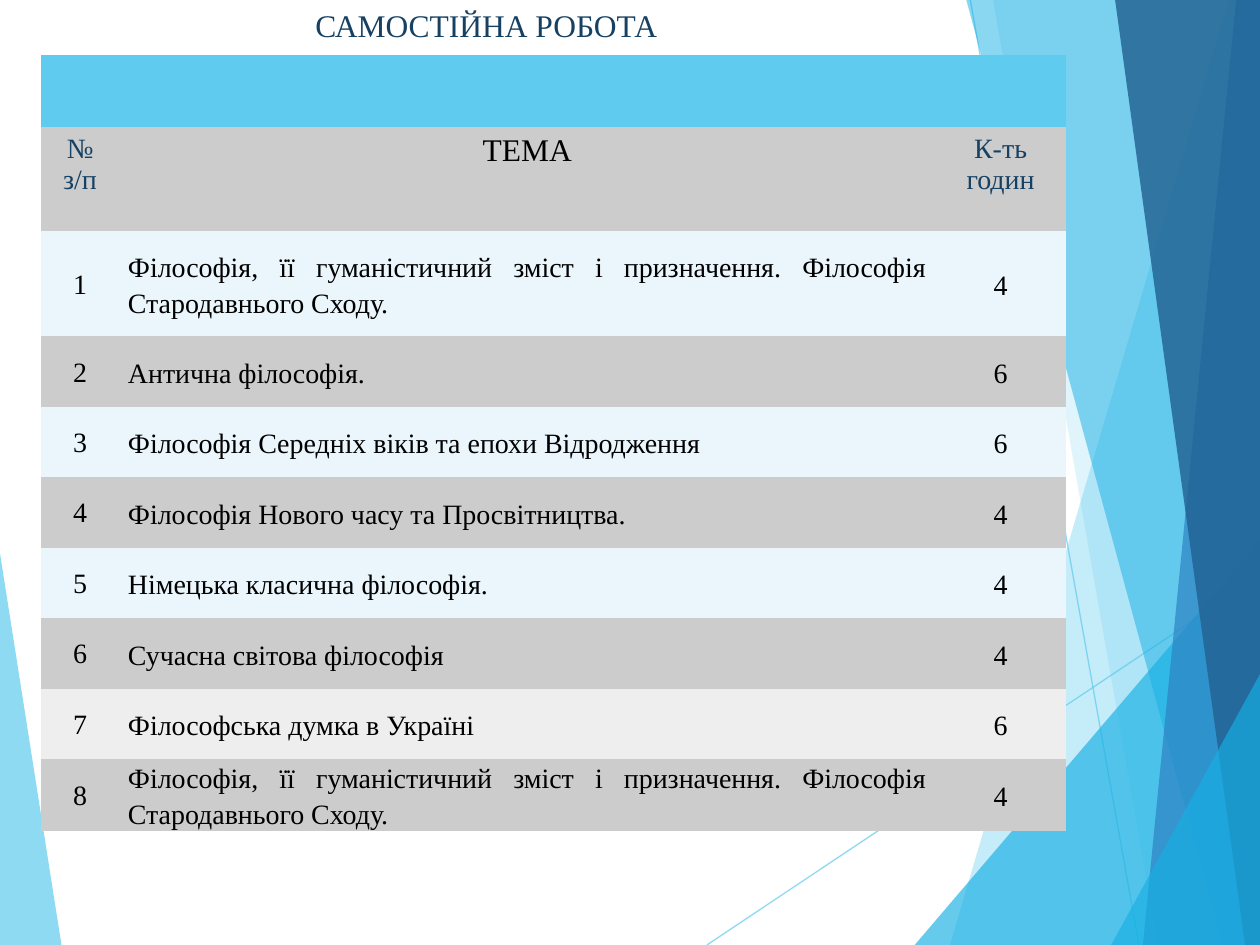
"""Builds the slide with the table of independent study topics."""
from lxml import etree
from pptx import Presentation
from pptx.dml.color import RGBColor
from pptx.enum.shapes import MSO_CONNECTOR
from pptx.enum.text import MSO_ANCHOR, MSO_AUTO_SIZE, PP_ALIGN
from pptx.oxml.ns import qn
from pptx.util import Cm, Pt

STRAIGHT = MSO_CONNECTOR.STRAIGHT
TOP, MIDDLE = MSO_ANCHOR.TOP, MSO_ANCHOR.MIDDLE
NO_AUTOFIT = MSO_AUTO_SIZE.NONE
CENTER, JUSTIFY = PP_ALIGN.CENTER, PP_ALIGN.JUSTIFY

SKY = RGBColor(0x5F, 0xCB, 0xEF)
CYAN = RGBColor(0x17, 0xB0, 0xE4)
BLUE = RGBColor(0x2E, 0x83, 0xC3)
DEEP = RGBColor(0x22, 0x62, 0x92)
NAVY = RGBColor(0x17, 0x41, 0x62)
BLACK = RGBColor(0, 0, 0)
GREY = RGBColor(0xCC, 0xCC, 0xCC)
PALE_BLUE = RGBColor(0xEA, 0xF6, 0xFC)
PALE_GREY = RGBColor(0xEE, 0xEE, 0xEE)

FONT = "Times New Roman"
PLAIN_TABLE = "{2D5ABB26-0587-4C30-8999-92F81FD0307C}"
WIDTH, HEIGHT = 25.4, 19.05

LEFT_WEDGE = (0, 11.15, 1.24, SKY, 70)
RAYS = [(14.25, HEIGHT, WIDTH, 11.61), (19.56, 0, 22.96, HEIGHT)]
RIGHT_WEDGES = [
    (24.77, 0, 19.15, SKY, 36),
    (20.02, 0, 23.34, SKY, 20),
    (WIDTH, 10.9, 18.44, CYAN, 66),
    (19.48, 0, 24.64, CYAN, 50),
    (24.92, 0, 23.04, BLUE, 70),
    (22.48, 0, 25.1, DEEP, 82),
    (WIDTH, 13.59, 22.4, CYAN, 66),
]

HEADINGS = [("№ з/п", 16, NAVY), ("ТЕМА", 18, BLACK), ("К-ть годин", 16, NAVY)]
INTRO = "Філософія, її гуманістичний зміст і призначення. Філософія Стародавнього Сходу."
TOPICS = [
    (INTRO, 4),
    ("Антична філософія.", 6),
    ("Філософія Середніх віків та епохи Відродження", 6),
    ("Філософія Нового часу та Просвітництва.", 4),
    ("Німецька класична філософія.", 4),
    ("Сучасна світова філософія", 4),
    ("Філософська думка в Україні", 6),
    (INTRO, 4),
]
COLUMNS = [1.57, 16.46, 2.62]
ROWS = [1.46, 2.08, 2.13] + [1.42] * 7


class Deck:
    """Holds the style and the current slide."""

    def __init__(self, prs):
        self.font = FONT
        self.slide = prs.slides.add_slide(prs.slide_layouts[5])
        self.shapes = self.slide.shapes

    def paint(self, fill, color, alpha):
        fill.solid()
        fill.fore_color.rgb = color
        clr = fill._xPr.find(qn("a:solidFill"))[0]
        etree.SubElement(clr, qn("a:alpha"), val=str(alpha * 1000))

    def set_text(self, tf, text, size, color, align=CENTER, spacing=None):
        tf.text = text
        p = tf.paragraphs[0]
        p.alignment = align
        p.line_spacing = spacing
        font = p.runs[0].font
        font.name, font.size, font.color.rgb = self.font, Pt(size), color

    def title(self, text, x, y, w, h):
        sp = self.shapes.title
        sp.left, sp.top, sp.width, sp.height = Cm(x), Cm(y), Cm(w), Cm(h)
        tf = sp.text_frame
        tf.auto_size, tf.vertical_anchor = NO_AUTOFIT, TOP
        self.set_text(tf, text, 18, NAVY)

    def wedge(self, x, y, foot, color, alpha, side=WIDTH):
        points = [(foot, HEIGHT), (side, HEIGHT), (side, y)]
        builder = self.shapes.build_freeform(Cm(x), Cm(y))
        builder.add_line_segments([(Cm(px), Cm(py)) for px, py in points])
        sp = builder.convert_to_shape()
        sp.shadow.inherit = False
        sp.line.fill.background()
        self.paint(sp.fill, color, alpha)

    def ray(self, x1, y1, x2, y2):
        line = self.shapes.add_connector(STRAIGHT, Cm(x1), Cm(y1), Cm(x2), Cm(y2))
        line.line.width = Pt(0.75)
        self.paint(line.line.fill, SKY, 70)
        etree.SubElement(line._element.spPr, qn("a:effectLst"))

    def table(self, x, y):
        frame = self.shapes.add_table(
            len(ROWS), len(COLUMNS), Cm(x), Cm(y), Cm(sum(COLUMNS)), Cm(sum(ROWS)))
        table = frame.table
        table.first_row = table.horz_banding = False
        table._tbl.tblPr.find(qn("a:tableStyleId")).text = PLAIN_TABLE
        for column, width in zip(table.columns, COLUMNS):
            column.width = Cm(width)
        for row, height in zip(table.rows, ROWS):
            row.height = Cm(height)
        return table

    def cell(self, cell, fill):
        cell.fill.solid()
        cell.fill.fore_color.rgb = fill

    def body_cell(self, cell, text, fill, align, spacing, margin):
        self.cell(cell, fill)
        cell.vertical_anchor = MIDDLE
        cell.margin_left = cell.margin_right = Cm(margin)
        cell.margin_top = cell.margin_bottom = 0
        self.set_text(cell.text_frame, text, 16, BLACK, align, spacing)


def main():
    prs = Presentation()
    prs.slide_width, prs.slide_height = Cm(WIDTH), Cm(HEIGHT)
    deck = Deck(prs)

    deck.wedge(*LEFT_WEDGE, side=0)
    for ray in RAYS:
        deck.ray(*ray)
    for wedge in RIGHT_WEDGES:
        deck.wedge(*wedge)

    table = deck.table(0.83, 1.11)
    table.cell(0, 0).merge(table.cell(0, 2))
    for col, (text, size, color) in enumerate(HEADINGS):
        deck.cell(table.cell(0, col), SKY)
        heading = table.cell(1, col)
        deck.cell(heading, GREY)
        deck.set_text(heading.text_frame, text, size, color)

    for number, (topic, hours) in enumerate(TOPICS, 1):
        fill = GREY if number % 2 == 0 else PALE_GREY if number == 7 else PALE_BLUE
        row = number + 1
        deck.body_cell(table.cell(row, 0), str(number), fill, CENTER, 1.07, 0.08)
        deck.body_cell(table.cell(row, 1), topic, fill, JUSTIFY, 1.15, 0.18)
        deck.body_cell(table.cell(row, 2), str(hours), fill, CENTER, 1.15, 0.18)

    deck.title("САМОСТІЙНА РОБОТА", 1.6, 0, 16.41, 1.02)
    prs.save("out.pptx")


if __name__ == "__main__":
    main()
